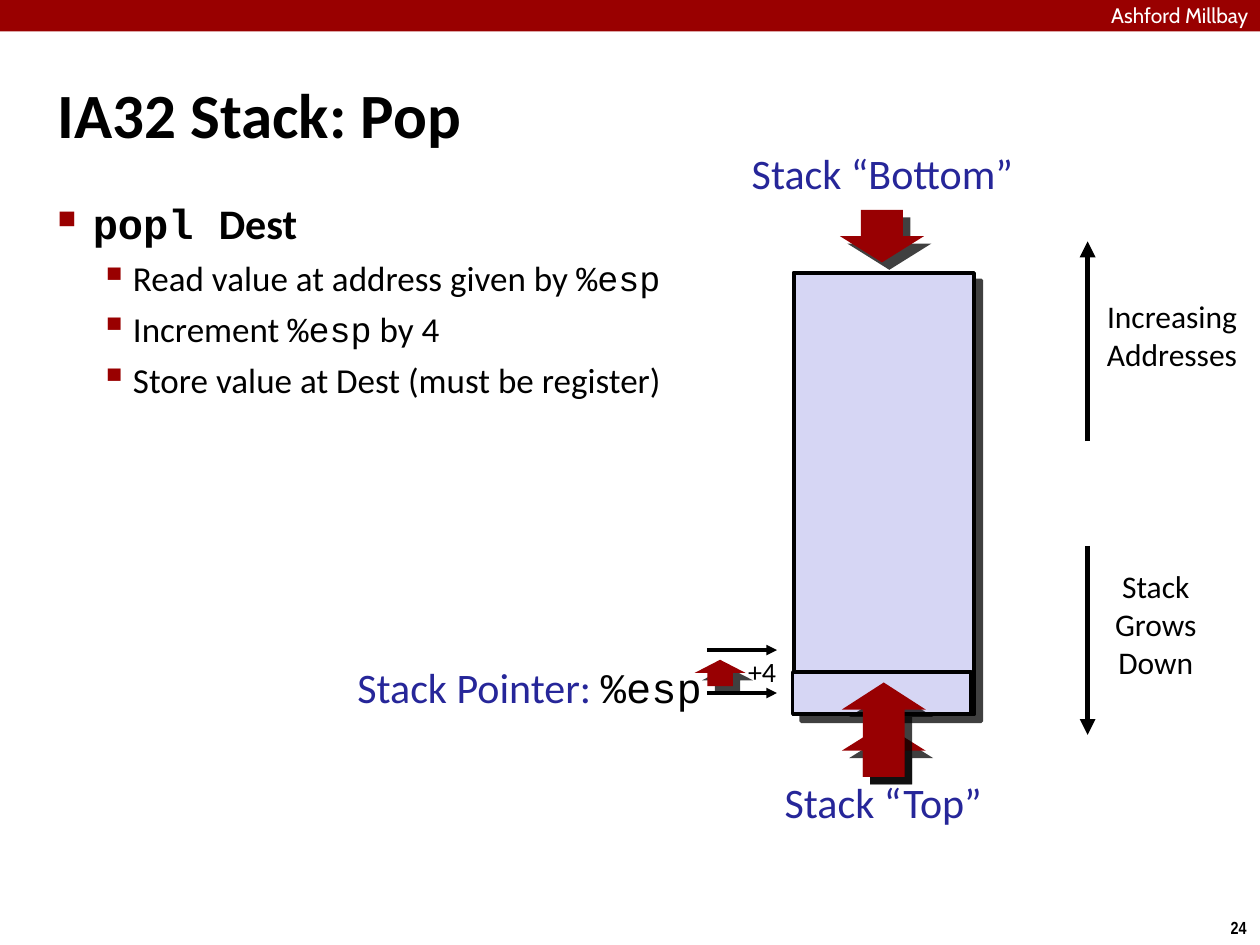
from pptx import Presentation
from pptx.util import Pt
from pptx.dml.color import RGBColor
from pptx.enum.shapes import MSO_SHAPE, MSO_CONNECTOR
from pptx.enum.text import PP_ALIGN, MSO_ANCHOR
from pptx.oxml import parse_xml
from pptx.oxml.ns import nsdecls

hue = RGBColor.from_string
NS = nsdecls("a")
RED, BLUE, LILAC, BLACK, WHITE = "980002", "262699", "D6D6F4", "000000", "FFFFFF"
SANS, MONO = "Calibri", "Courier New"
LEFT, MID, RIGHT = PP_ALIGN.LEFT, PP_ALIGN.CENTER, PP_ALIGN.RIGHT


def paint(shape, fill, edge=None, shade=False):
    shape.shadow.inherit = False
    shape.fill.solid()
    shape.fill.fore_color.rgb = hue(fill)
    if edge:
        shape.line.color.rgb = hue(BLACK)
        shape.line.width = Pt(edge)
    else:
        shape.line.fill.background()
    if shade:
        props = shape._element.spPr
        props.remove(props.find("{*}effectLst"))
        props.append(parse_xml(
            f'<a:effectLst {NS}><a:outerShdw dist="{Pt(6)}" dir="2700000" algn="ctr" '
            'rotWithShape="0"><a:srgbClr val="000000"><a:alpha val="75000"/>'
            '</a:srgbClr></a:outerShdw></a:effectLst>'))


def write(shape, rows, size, align=LEFT, inset=0, wrap=False, bold=False):
    """Fill a frame with rows of (text, font, colour) runs."""
    frame = shape.text_frame
    frame.word_wrap = wrap
    frame.vertical_anchor = MSO_ANCHOR.TOP
    frame.margin_left = frame.margin_right = Pt(inset)
    frame.margin_top = frame.margin_bottom = Pt(inset)
    for i, row in enumerate(rows):
        para = frame.paragraphs[0] if i == 0 else frame.add_paragraph()
        para.alignment = align
        for text, face, tint in row:
            run = para.add_run()
            run.text = text
            run.font.name, run.font.size, run.font.bold = face, Pt(size), bold
            run.font.color.rgb = hue(tint)
    return frame


deck = Presentation()
deck.slide_width, deck.slide_height = Pt(720), Pt(540)
slide = deck.slides.add_slide(deck.slide_layouts[6])
shapes = slide.shapes

# Top band, its label, and the page number
band = shapes.add_shape(MSO_SHAPE.RECTANGLE, 0, 0, Pt(720), Pt(18))
paint(band, "990000")
label = shapes.add_textbox(Pt(635), Pt(1.5), Pt(104), Pt(14))
write(label, [[("Ashford Millbay", "Cabin", WHITE)]], 12, wrap=True)
page = shapes.add_textbox(Pt(695.5), Pt(520.5), Pt(24.5), Pt(19.5))
write(page, [[("24", "Arial Narrow", BLACK)]], 10, MID, 3.6, bold=True)

# Title
title = shapes.add_textbox(Pt(30), Pt(20), Pt(660), Pt(90))
frame = write(title, [[("IA32 Stack: Pop", SANS, BLACK)]], 36, inset=3, wrap=True, bold=True)
frame.vertical_anchor = MSO_ANCHOR.MIDDLE

# Stack boxes and block arrows, back to front: x, y, w, h, kind, head, shadow
parts = [
    (481, 414, 48, 30, "up", 15, True),
    (453.6, 156, 103, 252, "box", 0, True),
    (480, 120, 48, 30, "down", 15, True),
    (453.6, 156, 103, 252, "box", 0, False),
    (397, 377, 29, 15, "up", 7.5, True),
    (453, 384, 102, 24, "box", 0, False),
    (481, 390, 48, 54, "up", 15.5, True),
]
for x, y, w, h, kind, head, shade in parts:
    if kind == "box":
        box = shapes.add_shape(MSO_SHAPE.RECTANGLE, Pt(x), Pt(y), Pt(w), Pt(h))
        paint(box, LILAC, 2, shade)
        continue
    tip, neck, tail = y, y + head, y + h
    if kind == "down":
        tip, neck, tail = y + h, y + h - head, y
    a, b = x + w / 4, x + w * 3 / 4
    dots = [(x, neck), (a, neck), (a, tail), (b, tail), (b, neck), (x + w, neck), (x + w / 2, tip)]
    dots = [(Pt(u), Pt(v)) for u, v in dots]
    path = shapes.build_freeform(*dots[0])
    path.add_line_segments(dots[1:], close=True)
    paint(path.convert_to_shape(), RED, shade=shade)

# Thin lines: x1, y1, x2, y2, width, arrowhead
lines = [
    (404, 396, 444, 396, 2, True),
    (404, 371.5, 444, 371.5, 2, True),
    (453, 384, 555, 384, 2, False),
    (621.5, 312, 621.5, 420, 3, True),
    (621.5, 252, 621.5, 138, 3, True),
]
for x1, y1, x2, y2, wide, head in lines:
    line = shapes.add_connector(MSO_CONNECTOR.STRAIGHT, Pt(x1), Pt(y1), Pt(x2), Pt(y2))
    line.line.color.rgb = hue(BLACK)
    line.line.width = Pt(wide)
    if head:
        line.line._get_or_add_ln().append(parse_xml(f'<a:tailEnd {NS} type="triangle"/>'))
    line._element.spPr.append(parse_xml(f"<a:effectLst {NS}/>"))

# Labels around the stack
labels = [
    (193.5, 378, 207.5, 36, 24, RIGHT, 0,
     [[("Stack Pointer: ", SANS, BLUE), ("%esp", MONO, BLACK)]]),
    (443.5, 443.5, 122.5, 35, 24, MID, 0, [[("Stack “Top”", SANS, BLUE)]]),
    (424, 84, 160.5, 35, 24, MID, 0, [[("Stack “Bottom”", SANS, BLUE)]]),
    (424, 371, 23, 25, 16, MID, 3, [[("+4", SANS, BLACK)]]),
]
for x, y, w, h, size, align, inset, rows in labels:
    note = shapes.add_textbox(Pt(x), Pt(y), Pt(w), Pt(h))
    write(note, rows, size, align, inset)

# White boxes beside the long arrows
sides = [
    (628.5, 324, 64, 72, True, ["Stack Grows", "Down"]),
    (629, 170, 81.5, 50, False, ["Increasing", "Addresses"]),
]
for x, y, w, h, wrap, words in sides:
    side = shapes.add_shape(MSO_SHAPE.RECTANGLE, Pt(x), Pt(y), Pt(w), Pt(h))
    paint(side, WHITE)
    write(side, [[(word, SANS, BLACK)] for word in words], 18, MID, wrap=wrap)

# Bullet list
body = shapes.add_textbox(Pt(30), Pt(110), Pt(660), Pt(428))
rows = [
    [("popl ", MONO, BLACK), ("Dest", SANS, BLACK)],
    [("Read value at address given by ", SANS, BLACK), ("%esp", MONO, BLACK)],
    [("Increment ", SANS, BLACK), ("%esp", MONO, BLACK), (" by 4", SANS, BLACK)],
    [("Store value at Dest (must be register)", SANS, BLACK)],
]
frame = write(body, rows, 20, inset=3, wrap=True)
for i, para in enumerate(frame.paragraphs):
    left, hang, gap, mark, scale = (43, 19, 5, "▪", 110) if i else (20, 20, 6, "■", 60)
    para.level = min(i, 1)
    para.space_before = Pt(gap)
    props = para._p.get_or_add_pPr()
    props.set("marL", str(Pt(left)))
    props.set("indent", str(-Pt(hang)))
    for tag in (f'<a:buClr {NS}><a:srgbClr val="990000"/></a:buClr>',
                f'<a:buSzPct {NS} val="{scale}000"/>',
                f'<a:buChar {NS} char="{mark}"/>'):
        props.append(parse_xml(tag))
for run in frame.paragraphs[0].runs:
    run.font.size, run.font.bold = Pt(24), True

deck.save("out.pptx")
